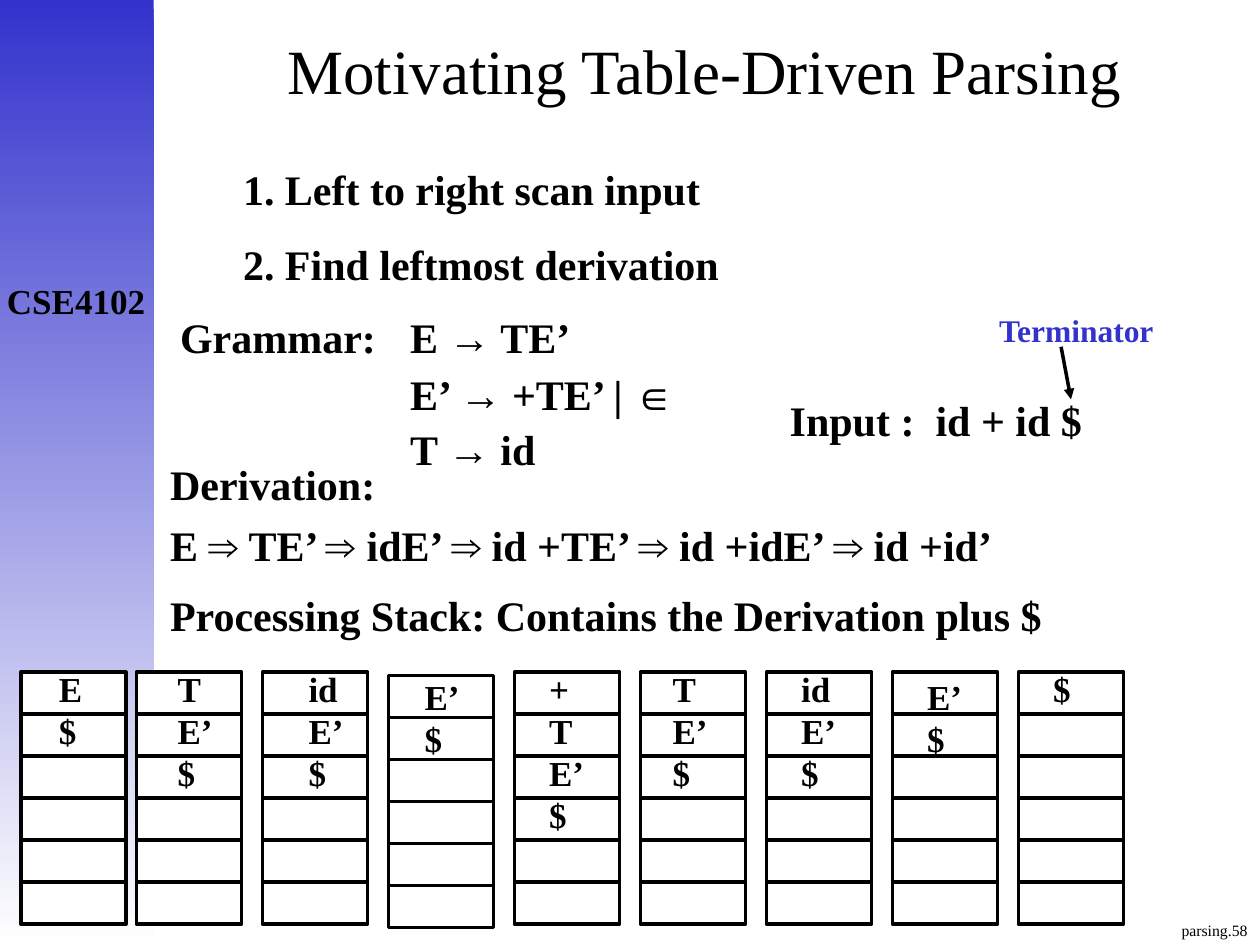
"""Build the slide on motivating table-driven parsing."""
from lxml.etree import SubElement
from pptx import Presentation
from pptx.dml.color import RGBColor
from pptx.enum.shapes import MSO_CONNECTOR as Connector, MSO_SHAPE as Shape
from pptx.enum.text import MSO_ANCHOR as Anchor, MSO_AUTO_SIZE as AutoSize, PP_ALIGN as Align
from pptx.oxml.ns import qn
from pptx.util import Cm, Pt

COLORS = {"ink": "000000", "paper": "FFFFFF", "accent": "3333CC"}
FONT = "Times New Roman"


def add_text(left, top, width, height, lines, size=24, bold=True, color="ink",
             align=Align.LEFT, wrap=True, before=0, spacing=None):
    shape = slide.shapes.add_textbox(Cm(left), Cm(top), Cm(width), Cm(height))
    frame = shape.text_frame
    frame.word_wrap = wrap
    frame.auto_size = AutoSize.SHAPE_TO_FIT_TEXT
    frame.text = "\n".join(lines)
    for number, paragraph in enumerate(frame.paragraphs):
        paragraph.alignment = align
        paragraph.space_before = Pt(before if number else 0)
        paragraph.line_spacing = spacing
        paragraph.font.name = FONT
        paragraph.font.size = Pt(size)
        paragraph.font.bold = bold
        paragraph.font.color.rgb = RGBColor.from_string(COLORS[color])
    return frame


def add_line(shapes, x1, y1, x2, y2):
    line = shapes.add_connector(Connector.STRAIGHT, Cm(x1), Cm(y1), Cm(x2), Cm(y2))
    line.line.color.rgb = RGBColor.from_string(COLORS["ink"])
    line.line.width = Pt(2)
    SubElement(line._element.spPr, qn("a:effectLst"))
    return line


presentation = Presentation()
presentation.slide_width = Cm(25.4)
presentation.slide_height = Cm(19.05)
slide = presentation.slides.add_slide(presentation.slide_layouts[6])

sidebar = slide.shapes.add_shape(Shape.RECTANGLE, Cm(0), Cm(0), Cm(3.1), Cm(19.05))
sidebar.shadow.inherit = False
sidebar.line.fill.background()
sidebar.fill.gradient()
sidebar.fill.gradient_angle = 270
for stop, name in zip(sidebar.fill.gradient_stops, ("accent", "paper")):
    stop.color.rgb = RGBColor.from_string(COLORS[name])

add_text(22.48, 18.44, 2.92, 0.64, ["parsing.58"], size=9, bold=False, align=Align.RIGHT)
add_text(-0.13, 5.51, 3.33, 1.12, ["CSE4102"], size=20, align=Align.CENTER, wrap=False)
title = add_text(3, 0, 22.4, 3.1, ["Motivating Table-Driven Parsing"], size=36,
                 bold=False, align=Align.CENTER, spacing=0.8)
title.auto_size = AutoSize.NONE
title.vertical_anchor = Anchor.MIDDLE

add_text(4.65, 3.18, 18.2, 2.8, ["1. Left to right scan input", "2. Find leftmost derivation"],
         before=14)
grammar = add_text(3.38, 6.15, 10.8, 3.5, ["Grammar:\tE → TE’", "E’ → +TE’ | ∈", "T → id"],
                   before=14)
rule_indent = Cm(4.64)
for number, paragraph in enumerate(grammar.paragraphs):
    properties = paragraph._p.get_or_add_pPr()
    properties.set("marL", str(rule_indent))
    properties.set("indent", str(0 if number else -rule_indent))
    if number:
        paragraph.line_spacing = 0.6
    else:
        tabs = properties.makeelement(qn("a:tabLst"))
        SubElement(tabs, qn("a:tab"), pos=str(rule_indent), algn="l")
        properties.find(qn("a:defRPr")).addprevious(tabs)

add_text(15.67, 7.82, 8.69, 1.27, ["Input :  id + id $"])
add_text(3.18, 11.76, 19.15, 1.27, ["Processing Stack: Contains the Derivation plus $"])
add_text(19.89, 6.15, 4.88, 1.02, ["Terminator"], size=18, color="accent")
add_text(3.18, 9.12, 21.4, 2.5,
         ["Derivation:", "E ⇒ TE’ ⇒ idE’ ⇒ id +TE’ ⇒ id +idE’ ⇒ id +id’"], before=6)
arrow = add_line(slide.shapes, 21.39, 6.99, 21.59, 8.05)
SubElement(arrow.line._get_or_add_ln(), qn("a:tailEnd"), type="triangle")

stack_width, stack_height, row_count = 2.12, 5.08, 6
row_height = stack_height / row_count
stacks = [
    (0.42, 13.55, 0.94, 13.34, ["E", "$"]),
    (2.75, 13.55, 3.33, 13.34, ["T", "E’", "$"]),
    (5.29, 13.55, 5.97, 13.34, ["id", "E’", "$"]),
    (7.83, 13.62, 8.31, 13.49, ["E’", "$"]),
    (10.37, 13.55, 10.82, 13.34, ["+", "T", "E’", "$"]),
    (12.91, 13.55, 13.31, 13.34, ["T", "E’", "$"]),
    (15.45, 13.55, 15.9, 13.34, ["id", "E’", "$"]),
    (17.99, 13.55, 18.44, 13.49, ["E’", "$"]),
    (20.53, 13.55, 20.98, 13.34, ["$"]),
]
for number, (left, top, text_left, text_top, symbols) in enumerate(stacks):
    group = slide.shapes.add_group_shape()
    box = group.shapes.add_shape(Shape.RECTANGLE, Cm(left), Cm(top),
                                 Cm(stack_width), Cm(stack_height))
    box.shadow.inherit = False
    box.line.color.rgb = RGBColor.from_string(COLORS["ink"])
    box.line.width = Pt(2)
    if number < 2:
        box.fill.solid()
        box.fill.fore_color.rgb = RGBColor.from_string(COLORS["paper"])
    else:
        box.fill.background()
    for row in range(1, row_count):
        y = top + row * row_height
        divider = add_line(group.shapes, left, y, left + stack_width, y)
        if row * 2 == row_count:
            divider.begin_connect(box, 1)
            divider.end_connect(box, 3)
    text_width = 1.22 if "E’" in symbols else 0.95
    add_text(text_left, text_top, text_width, 0.27 + 0.85 * len(symbols), symbols,
             size=20, wrap=False, spacing=Pt(24))

presentation.save("out.pptx")
